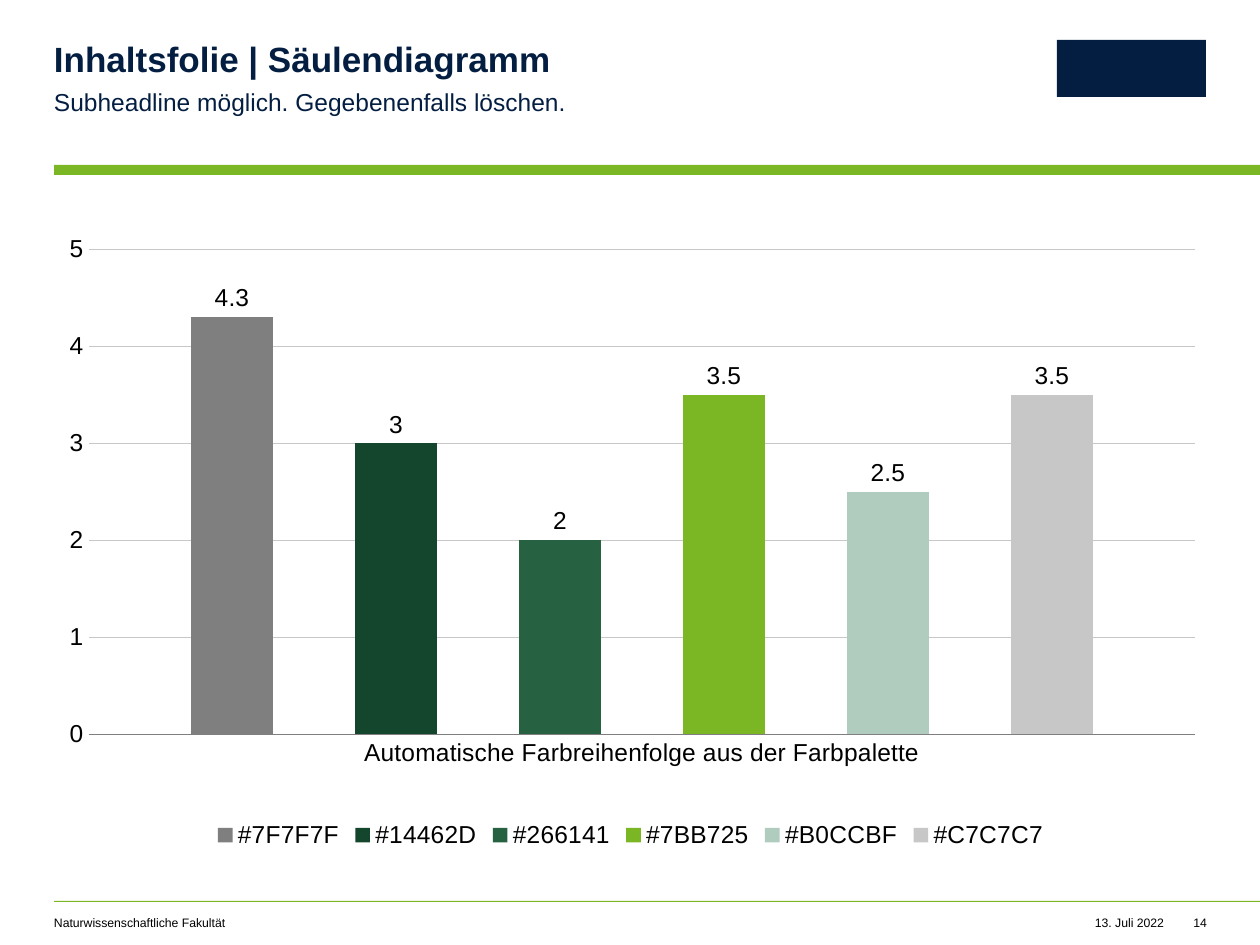
import pptx
import pptx.chart.data
import pptx.dml.color
import pptx.enum.chart
import pptx.enum.shapes
import pptx.enum.text
import pptx.oxml
import pptx.oxml.ns
import pptx.util

SCALE = 914400 / 126
FONT = "Arial"
NAVY, GREEN, BLACK = "041E42", "7BB725", "000000"
AXIS_GRAY, GRID_GRAY = "7F7F7F", "C7C7C7"
LEFT, RIGHT, WIDTH, HEIGHT = 54, 1207, 1260, 945
FOOTER_TOP = 915
CATEGORY = "Automatische Farbreihenfolge aus der Farbpalette"
BARS = {
    "#7F7F7F": 4.3,
    "#14462D": 3,
    "#266141": 2,
    "#7BB725": 3.5,
    "#B0CCBF": 2.5,
    "#C7C7C7": 3.5,
}
PLOT_LAYOUT = {
    "layoutTarget": "inner",
    "xMode": "edge",
    "yMode": "edge",
    "x": 0.03,
    "y": 0.04,
    "w": 0.96,
    "h": 0.77,
}


def px(n):
    return pptx.util.Emu(round(n * SCALE))


def rgb(color):
    return pptx.dml.color.RGBColor.from_string(color)


def apply(obj, values):
    for name, value in values.items():
        setattr(obj, name, value)


def set_font(font, size, color, bold=False):
    apply(font, {"name": FONT, "size": pptx.util.Pt(size), "bold": bold})
    font.color.rgb = rgb(color)


def set_line(line, color):
    line.color.rgb = rgb(color)
    line.width = pptx.util.Pt(0.5)


def add_block(s, x, y, w, h, color):
    kind = pptx.enum.shapes.MSO_SHAPE.RECTANGLE
    sp = s.shapes.add_shape(kind, px(x), px(y), px(w), px(h))
    sp.shadow.inherit = False
    sp.fill.solid()
    sp.fill.fore_color.rgb = rgb(color)
    sp.line.fill.background()


def add_text(s, box, text, size, color=BLACK, bold=False, wrap=True, right_inset=0, **paragraph):
    sp = s.shapes.add_textbox(*map(px, box))
    tf = sp.text_frame
    apply(tf, {
        "margin_left": 0,
        "margin_top": 0,
        "margin_right": px(right_inset),
        "margin_bottom": 0,
        "word_wrap": wrap,
        "auto_size": pptx.enum.text.MSO_AUTO_SIZE.SHAPE_TO_FIT_TEXT,
    })
    p = tf.paragraphs[0]
    apply(p, paragraph)
    r = p.add_run()
    r.text = text
    set_font(r.font, size, color, bold)


def set_plot_layout(chart):
    plot_area = chart.plots[0]._element.getparent()
    for old in plot_area.findall(pptx.oxml.ns.qn("c:layout")):
        plot_area.remove(old)
    items = "".join(f'<c:{tag} val="{val}"/>' for tag, val in PLOT_LAYOUT.items())
    layout = pptx.oxml.parse_xml(
        f'<c:layout {pptx.oxml.ns.nsdecls("c")}><c:manualLayout>{items}</c:manualLayout></c:layout>'
    )
    plot_area.insert(0, layout)


def format_axes(chart):
    no_tick = pptx.enum.chart.XL_TICK_MARK.NONE
    for axis in (chart.category_axis, chart.value_axis):
        apply(axis, {"major_tick_mark": no_tick, "minor_tick_mark": no_tick})
        set_font(axis.tick_labels.font, 14, BLACK)
    set_line(chart.category_axis.format.line, AXIS_GRAY)
    axis = chart.value_axis
    apply(axis, {"minimum_scale": 0, "maximum_scale": 5, "major_unit": 1, "has_major_gridlines": True})
    axis.format.line.fill.background()
    set_line(axis.major_gridlines.format.line, GRID_GRAY)


def add_column_chart(s, x, y, w, h):
    data = pptx.chart.data.CategoryChartData()
    data.categories = [CATEGORY]
    for name, value in BARS.items():
        data.add_series(name, [value])
    kind = pptx.enum.chart.XL_CHART_TYPE.COLUMN_CLUSTERED
    chart = s.shapes.add_chart(kind, px(x), px(y), px(w), px(h), data).chart
    apply(chart, {"has_title": False, "has_legend": True})
    set_font(chart.font, 14, BLACK)
    apply(chart.legend, {
        "position": pptx.enum.chart.XL_LEGEND_POSITION.BOTTOM,
        "include_in_layout": False,
    })
    set_font(chart.legend.font, 14, BLACK)
    plot = chart.plots[0]
    apply(plot, {"gap_width": 250, "overlap": -100, "vary_by_categories": False})
    for series in plot.series:
        series.format.fill.solid()
        series.format.fill.fore_color.rgb = rgb(series.name.lstrip("#"))
        labels = series.data_labels
        apply(labels, {
            "show_value": True,
            "position": pptx.enum.chart.XL_LABEL_POSITION.OUTSIDE_END,
        })
        set_font(labels.font, 14, BLACK)
    format_axes(chart)
    set_plot_layout(chart)


def main():
    prs = pptx.Presentation()
    apply(prs, {"slide_width": px(WIDTH), "slide_height": px(HEIGHT)})
    s = prs.slides.add_slide(prs.slide_layouts[6])
    right = pptx.enum.text.PP_ALIGN.RIGHT

    add_block(s, LEFT, 165, WIDTH - LEFT, 10, GREEN)
    add_block(s, LEFT, 901, WIDTH - LEFT, 1, GREEN)
    add_block(s, 1057, 40, 149, 57, NAVY)

    add_text(s, (LEFT, 42, 707, 38), "Inhaltsfolie | Säulendiagramm", 20, NAVY, bold=True, line_spacing=0.9)
    add_text(s, (LEFT, 84, 707, 30), "Subheadline möglich. Gegebenenfalls löschen.", 14, NAVY,
             right_inset=49, line_spacing=1.1, space_after=pptx.util.Pt(8))
    add_column_chart(s, LEFT, 224, RIGHT - LEFT, 630)

    add_text(s, (LEFT, FOOTER_TOP, 566, 15), "Naturwissenschaftliche Fakultät", 7)
    add_text(s, (1075, FOOTER_TOP, 89, 15), "13. Juli 2022", 7, wrap=False, alignment=right)
    add_text(s, (1182, FOOTER_TOP, 25, 15), "14", 7, wrap=False, alignment=right)

    prs.save("out.pptx")


if __name__ == "__main__":
    main()
